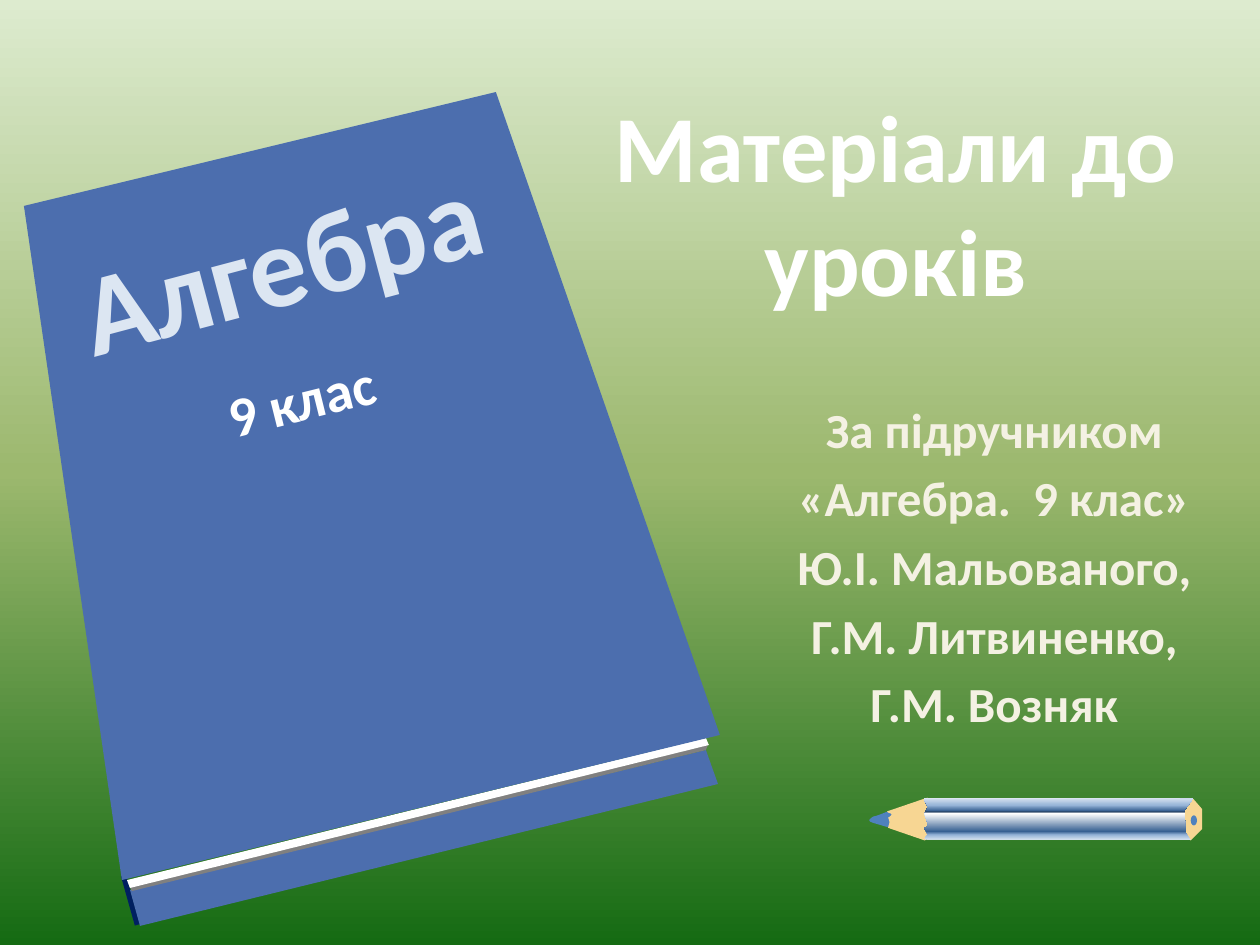
from dataclasses import dataclass

from lxml import etree
from pptx import Presentation
from pptx.dml.color import RGBColor
from pptx.enum import shapes, text
from pptx.oxml import ns
from pptx.util import Pt


@dataclass(frozen=True)
class Theme:
    """Colours, gradients and type sizes of the slide."""
    font: str = "Calibri"
    white: str = "FFFFFF"
    pale_blue: str = "DCE6F2"
    cream: str = "F4F1E3"
    cover: str = "4C6EAE"
    spine: str = "002060"
    page_shade: str = "808080"
    lead: str = "4F81BD"
    wood: str = "F7D693"
    meadow: tuple = ((0, "DDEBCF"), (50, "9CB86E"), (100, "156B13"))
    barrel: tuple = ((0, "DCE6F2"), (13, "95B3D7"), (21, "376092"), (63, "FFFFFF"),
                     (67, "254061"), (69, "376092"), (82, "95B3D7"), (100, "DCE6F2"))
    book_title: int = 66
    heading: int = 54
    grade: int = 32
    source: int = 28


THEME = Theme()


def paint_gradient(fill, owner, stops, angle):
    """Fill with a linear gradient of any number of stops."""
    fill.gradient()
    fill.gradient_angle = angle
    stop_list = next(owner.iter(ns.qn("a:gsLst")))
    for old in list(stop_list):
        stop_list.remove(old)
    for position, color in stops:
        stop = etree.SubElement(stop_list, ns.qn("a:gs"), pos=str(position * 1000))
        etree.SubElement(stop, ns.qn("a:srgbClr"), val=color)


def paint(shape, color):
    """Give a shape a plain or gradient fill with no line or shadow."""
    shape.shadow.inherit = False
    shape.line.fill.background()
    if isinstance(color, str):
        shape.fill.solid()
        shape.fill.fore_color.rgb = RGBColor.from_string(color)
    else:
        paint_gradient(shape.fill, shape.element, color, 90)


def trace(start, steps, samples=8):
    """Turn points and cubic curves into a list of points."""
    points = [start]
    for step in steps:
        if len(step) == 2:
            points.append(step)
            continue
        x0, y0 = points[-1]
        x1, y1, x2, y2, x3, y3 = step
        for i in range(1, samples + 1):
            t = i / samples
            weights = ((1 - t) ** 3, 3 * t * (1 - t) ** 2, 3 * t * t * (1 - t), t ** 3)
            points.append(tuple(sum(w * v for w, v in zip(weights, values))
                                for values in ((x0, x1, x2, x3), (y0, y1, y2, y3))))
    return points


def add_outline(slide, box, steps, color):
    """Draw a closed outline relative to the box."""
    left, top = box[:2]
    first, *rest = [(Pt(left + x), Pt(top + y)) for x, y in trace(steps[0], steps[1:])]
    builder = slide.shapes.build_freeform(*first, scale=1.0)
    builder.add_line_segments(rest, close=True)
    paint(builder.convert_to_shape(), color)


def add_words(slide, box, lines, size, color, rotation=0, frame_format=None,
              paragraph_format=None):
    """Place bold lines of text in a box."""
    label = slide.shapes.add_textbox(*map(Pt, box))
    label.rotation = rotation
    for name, value in (frame_format or {}).items():
        setattr(label.text_frame, name, value)
    label.text_frame.text = "\n".join(lines)
    for paragraph in label.text_frame.paragraphs:
        for name, value in (paragraph_format or {}).items():
            setattr(paragraph, name, value)
        font = paragraph.runs[0].font
        for name, value in {"name": THEME.font, "size": Pt(size), "bold": True}.items():
            setattr(font, name, value)
        font.color.rgb = RGBColor.from_string(color)


def add_book(slide, box):
    """Draw the tilted textbook with its cover words."""
    left, top = box[:2]
    spine = slide.shapes.add_connector(
        shapes.MSO_CONNECTOR.STRAIGHT, Pt(left + 56.9), Pt(top + 447.8),
        Pt(left + 64.8), Pt(top + 475.9))
    spine.line.width = Pt(3)
    spine.line.color.rgb = RGBColor.from_string(THEME.spine)
    etree.SubElement(spine.element.spPr, ns.qn("a:effectLst"))
    layers = (
        (THEME.cover, [(60.6, 456), (389.7, 376), (396.6, 395.4), (66.3, 476.5)]),
        (THEME.page_shade, [(60.6, 454.3), (390.9, 373.1), (389.7, 376), (61.7, 456.6)]),
        (THEME.white, [(58.9, 450.3), (389.7, 369.1), (391.4, 373.1), (60.6, 454.8)]),
        (THEME.cover, [(0, 65.1), (269.7, 0), (397.7, 367.4), (56, 450.3)]),
    )
    for color, corners in layers:
        add_outline(slide, box, corners, color)
    snug = {"word_wrap": False, "auto_size": text.MSO_AUTO_SIZE.SHAPE_TO_FIT_TEXT}
    add_words(slide, (left + 21.6, top + 51.8, 255.6, 81.4), ["Алгебра"],
              THEME.book_title, THEME.pale_blue, 345.1, snug)
    add_words(slide, (left + 108, top + 146.8, 146.2, 46.1), ["9 клас"],
              THEME.grade, THEME.white, 345.9, snug)


def add_heading(slide, box):
    """Place the main heading."""
    add_words(slide, box, ["Матеріали до уроків"], THEME.heading, THEME.white,
              frame_format={"word_wrap": True,
                            "vertical_anchor": text.MSO_ANCHOR.MIDDLE},
              paragraph_format={"alignment": text.PP_ALIGN.CENTER})


def add_source(slide, box):
    """Place the textbook and its authors."""
    lines = ["За підручником", "«Алгебра.  9 клас»", "Ю.І. Мальованого,",
             "Г.М. Литвиненко,", "Г.М. Возняк"]
    add_words(slide, box, lines, THEME.source, THEME.cream,
              frame_format={"word_wrap": True},
              paragraph_format={"alignment": text.PP_ALIGN.CENTER,
                                "space_before": Pt(5.6)})


def add_pencil(slide, box):
    """Draw the pencil from its tip to its blunt end."""
    left, top = box[:2]
    parts = (
        (THEME.lead, [(15.1, 7.9), (13, 6.5, 7.9, 10.1, 3.6, 10.8),
                      (0, 13, 1.4, 13.7, 3.6, 14.4), (15.8, 18),
                      (15.1, 8.6, 17.3, 8.6, 15.1, 7.9)]),
        (THEME.wood, [(34.6, 0), (11.5, 7.9), (12.2, 9.4, 16.6, 8.6, 12.2, 11.5),
                      (13.7, 15.1, 12.2, 15.1, 12.2, 17.3), (33.1, 24.5),
                      (40.3, 19.4), (39.6, 10.8)]),
        (THEME.wood, [(186.5, 0.7), (191.5, 6.5), (191.5, 18), (185, 24.5),
                      (179.3, 18.7), (179.3, 5)]),
        (THEME.barrel, [(32.4, 0), (32.4, 2.9, 36.7, 4.3, 33.1, 8.6),
                        (32.4, 11.5, 37.4, 16.6, 32.4, 17.3),
                        (36.7, 22.3, 33.1, 21.6, 33.1, 23.8), (185, 24.5),
                        (182.2, 20.2), (181.4, 7.2), (186.5, 0.7)]),
    )
    for color, steps in parts:
        add_outline(slide, box, steps, color)
    core = slide.shapes.add_shape(shapes.MSO_SHAPE.OVAL, Pt(left + 185),
                                  Pt(top + 10.1), Pt(3.6), Pt(5.8))
    paint(core, THEME.lead)


def main():
    """Build and save the title slide."""
    deck = Presentation()
    deck.slide_width, deck.slide_height = Pt(720), Pt(540)
    slide = deck.slides.add_slide(deck.slide_layouts[6])
    paint_gradient(slide.background.fill, slide.element, THEME.meadow, 270)
    add_book(slide, (13.7, 52.6, 397.7, 476.5))
    add_heading(slide, (303.8, 50.4, 416.2, 129.6))
    add_source(slide, (416.2, 224.6, 303.8, 208.1))
    add_pencil(slide, (495.4, 455.8, 191.5, 24.5))
    deck.save("out.pptx")


if __name__ == "__main__":
    main()
